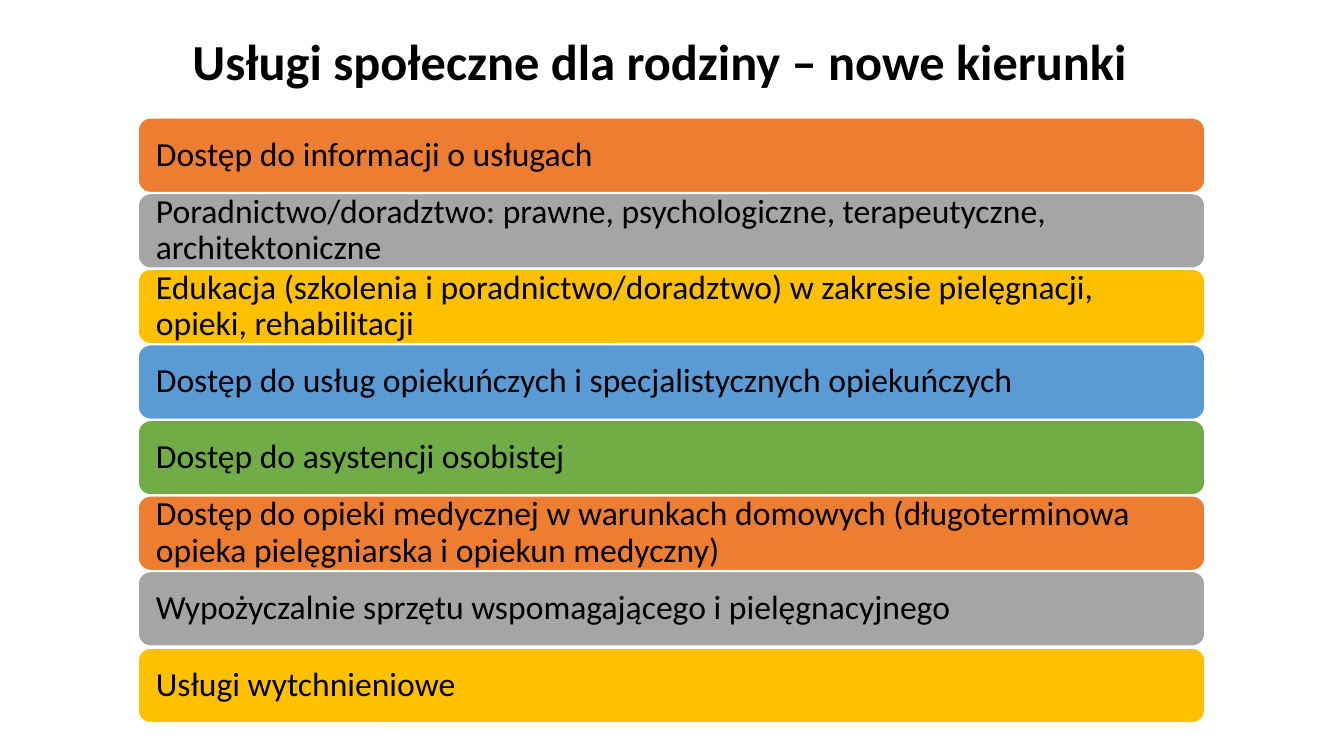
from dataclasses import dataclass
from pptx import Presentation
from pptx.dml.color import RGBColor
from pptx.enum.shapes import MSO_SHAPE
from pptx.enum.text import MSO_ANCHOR, MSO_AUTO_SIZE, PP_ALIGN
from pptx.util import Pt

SCALE = 9144


@dataclass(frozen=True)
class Theme:
    font: str = "Calibri"
    ink: str = "000000"
    edge: str = "FFFFFF"
    fills: tuple = ("ED7D31", "A5A5A5", "FFC000", "5B9BD5", "70AD47")
    head: int = 36
    body: int = 24


def px(count):
    return count * SCALE


def write(frame, text, *, font, size, color, bold=False,
          align=PP_ALIGN.LEFT, pads=(0, 0, 0, 0)):
    frame.word_wrap = True
    frame.auto_size = MSO_AUTO_SIZE.NONE
    frame.vertical_anchor = MSO_ANCHOR.MIDDLE
    frame.margin_left, frame.margin_top, frame.margin_right, frame.margin_bottom = map(px, pads)
    para = frame.paragraphs[0]
    para.alignment = align
    para.line_spacing = 0.9
    para.space_before = Pt(0)
    run = para.add_run()
    run.text = text
    run.font.name = font
    run.font.size = Pt(size)
    run.font.bold = bold
    run.font.color.rgb = RGBColor.from_string(color)


class Deck:
    def __init__(self, theme):
        self.theme = theme
        self.file = Presentation()
        self.file.slide_width, self.file.slide_height = px(1333), px(750)
        self.slide = self.file.slides.add_slide(self.file.slide_layouts[5])

    def title(self, text, left, top, width, height):
        shape = self.slide.shapes.title
        shape.left, shape.top, shape.width, shape.height = map(px, (left, top, width, height))
        write(shape.text_frame, text, font=self.theme.font, size=self.theme.head,
              color=self.theme.ink, bold=True, align=PP_ALIGN.CENTER, pads=(0, 2, 23, 0))

    def bar(self, text, fill, left, top, width, height):
        shape = self.slide.shapes.add_shape(
            MSO_SHAPE.ROUNDED_RECTANGLE, *map(px, (left, top, width, height)))
        shape.shadow.inherit = False
        shape.fill.solid()
        shape.fill.fore_color.rgb = RGBColor.from_string(fill)
        shape.line.color.rgb = RGBColor.from_string(self.theme.edge)
        shape.line.width = Pt(1)
        write(shape.text_frame, text, font=self.theme.font, size=self.theme.body,
              color=self.theme.ink, pads=(14, 0, 14, 0))

    def bars(self, texts, left, top, width, height, span):
        fills = self.theme.fills
        for row, text in enumerate(texts):
            shift = row * span // (len(texts) - 1)
            self.bar(text, fills[row % len(fills)], left, top + shift, width, height)


def main():
    deck = Deck(Theme())
    deck.title("Usługi społeczne dla rodziny – nowe kierunki", 162, 35, 1008, 56)
    deck.bars([
        "Dostęp do informacji o usługach",
        "Poradnictwo/doradztwo: prawne, psychologiczne, terapeutyczne, architektoniczne",
        "Edukacja (szkolenia i poradnictwo/doradztwo) w zakresie pielęgnacji, opieki, rehabilitacji",
        "Dostęp do usług opiekuńczych i specjalistycznych opiekuńczych",
        "Dostęp do asystencji osobistej",
        "Dostęp do opieki medycznej w warunkach domowych (długoterminowa opieka pielęgniarska i opiekun medyczny)",
        "Wypożyczalnie sprzętu wspomagającego i pielęgnacyjnego",
        "Usługi wytchnieniowe",
    ], left=137, top=117, width=1058, height=74, span=526)
    deck.file.save("out.pptx")


if __name__ == "__main__":
    main()
